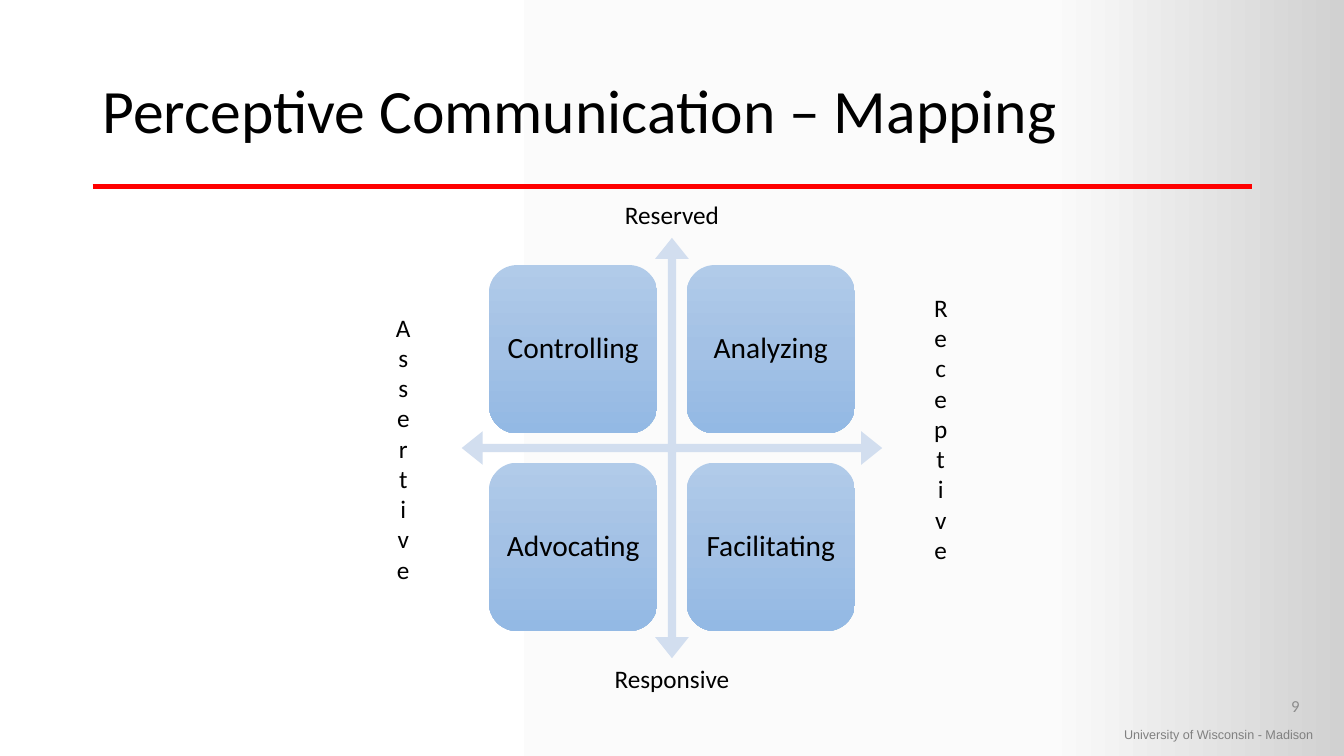
from dataclasses import dataclass

import pptx
import pptx.util
from lxml import etree
from pptx.dml.color import RGBColor
from pptx.enum.shapes import MSO_CONNECTOR, MSO_SHAPE
from pptx.enum.text import MSO_ANCHOR, MSO_AUTO_SIZE, PP_ALIGN
from pptx.oxml.ns import qn
from pptx.util import Inches


@dataclass(frozen=True)
class Theme:
    font: str = "Calibri"
    footer_font: str = "Arial"
    text: str = "000000"
    footer: str = "808080"
    number: str = "8C8C8C"
    rule: str = "FF0000"
    arrows: str = "D2DEEF"
    background: tuple = ((0, "FFFFFF"), (78, "FBFBFB"), (100, "D1D1D1"))
    tile: tuple = ((0, "B1CBE9"), (50, "A3C1E5"), (100, "93B9E4"))
    title_size: int = 44
    tile_size: int = 21
    label_size: int = 18
    number_size: int = 12
    footer_size: int = 9


THEME = Theme()
TILE_SIDE = 1.67
TILE_LEFT, TILE_TOP, TILE_PITCH = 4.85, 2.63, 1.96
QUADRANTS = (("Controlling", "Analyzing"), ("Advocating", "Facilitating"))


def set_gradient(fill, owner, stops, angle):
    """Give the fill, whose XML lies inside owner, a linear gradient with any number of stops."""
    fill.gradient()
    gradient = next(owner.iter(qn("a:gradFill")))
    stop_list = gradient.find(qn("a:gsLst"))
    for old_stop in list(stop_list):
        stop_list.remove(old_stop)
    for position, color in stops:
        stop = etree.SubElement(stop_list, qn("a:gs"), pos=str(position * 1000))
        etree.SubElement(stop, qn("a:srgbClr"), val=color)
    gradient.find(qn("a:lin")).set("ang", str(angle * 60000))


def write_text(shape, text, size, color=THEME.text, font=THEME.font, align=PP_ALIGN.LEFT,
               anchor=MSO_ANCHOR.TOP, wrap=True, grow=False, line_spacing=None,
               inset=None, stacked=False):
    frame = shape.text_frame
    frame.word_wrap = wrap
    frame.vertical_anchor = anchor
    frame.auto_size = MSO_AUTO_SIZE.SHAPE_TO_FIT_TEXT if grow else MSO_AUTO_SIZE.NONE
    if inset is not None:
        frame.margin_left = frame.margin_right = Inches(inset)
        frame.margin_top = frame.margin_bottom = Inches(inset)
    paragraph = frame.paragraphs[0]
    paragraph.alignment = align
    paragraph.line_spacing = line_spacing
    run = paragraph.add_run()
    run.text = text
    run.font.name = font
    run.font.size = pptx.util.Pt(size)
    run.font.color.rgb = RGBColor.from_string(color)
    if stacked:
        frame._txBody.bodyPr.set("vert", "wordArtVert")
        run._r.get_or_add_rPr().set("spc", "-100")


def add_text(slide, text, left, top, width, height, **text_format):
    box = slide.shapes.add_textbox(Inches(left), Inches(top), Inches(width), Inches(height))
    write_text(box, text, **text_format)


def add_axis_label(slide, text, left, top, width, height, **text_format):
    add_text(slide, text, left, top, width, height, size=THEME.label_size,
             align=PP_ALIGN.CENTER, wrap=False, grow=True, **text_format)


def add_rule(slide):
    rule = slide.shapes.add_connector(
        MSO_CONNECTOR.STRAIGHT, Inches(0.92), Inches(1.85), Inches(12.42), Inches(1.85))
    rule.line.color.rgb = RGBColor.from_string(THEME.rule)
    rule.line.width = pptx.util.Pt(3)
    etree.SubElement(rule._element.spPr, qn("a:effectLst"))


def add_plain_shape(slide, kind, left, top, side):
    shape = slide.shapes.add_shape(kind, Inches(left), Inches(top), Inches(side), Inches(side))
    shape.shadow.inherit = False
    shape.line.fill.background()
    return shape


def add_axes(slide):
    axes = add_plain_shape(slide, MSO_SHAPE.QUAD_ARROW, 4.58, 2.36, 4.17)
    for index, value in enumerate((0.02, 0.04, 0.05)):
        axes.adjustments[index] = value
    axes.fill.solid()
    axes.fill.fore_color.rgb = RGBColor.from_string(THEME.arrows)


def add_tile(slide, text, left, top):
    tile = add_plain_shape(slide, MSO_SHAPE.ROUNDED_RECTANGLE, left, top, TILE_SIDE)
    set_gradient(tile.fill, tile._element, THEME.tile, 90)
    write_text(tile, text, size=THEME.tile_size, align=PP_ALIGN.CENTER,
               anchor=MSO_ANCHOR.MIDDLE, line_spacing=0.9, inset=0.08, wrap=False)


def main():
    presentation = pptx.Presentation()
    presentation.slide_width = Inches(13.33)
    presentation.slide_height = Inches(7.5)
    slide = presentation.slides.add_slide(presentation.slide_layouts[6])
    set_gradient(slide.background.fill, slide._element, THEME.background, 0)

    add_text(slide, "University of Wisconsin - Madison", 11.05, 7.16, 2.2, 0.25,
             size=THEME.footer_size, color=THEME.footer, font=THEME.footer_font, wrap=False)
    add_rule(slide)
    add_text(slide, "Perceptive Communication – Mapping", 0.92, 0.4, 11.5, 1.45,
             size=THEME.title_size, anchor=MSO_ANCHOR.MIDDLE, line_spacing=0.9)
    add_text(slide, "9", 9.99, 6.8, 3, 0.4, size=THEME.number_size, color=THEME.number,
             align=PP_ALIGN.RIGHT, anchor=MSO_ANCHOR.MIDDLE)

    add_axes(slide)
    for row, names in enumerate(QUADRANTS):
        for column, name in enumerate(names):
            add_tile(slide, name, TILE_LEFT + column * TILE_PITCH, TILE_TOP + row * TILE_PITCH)

    add_axis_label(slide, "Responsive", 5.99, 6.53, 1.35, 0.4)
    add_axis_label(slide, "Assertive", 3.72, 2.84, 0.56, 3.21, stacked=True)
    add_axis_label(slide, "Receptive", 9.05, 2.65, 0.56, 3.2, stacked=True)
    add_axis_label(slide, "Reserved", 6.09, 1.93, 1.15, 0.4)
    presentation.save("out.pptx")


if __name__ == "__main__":
    main()
